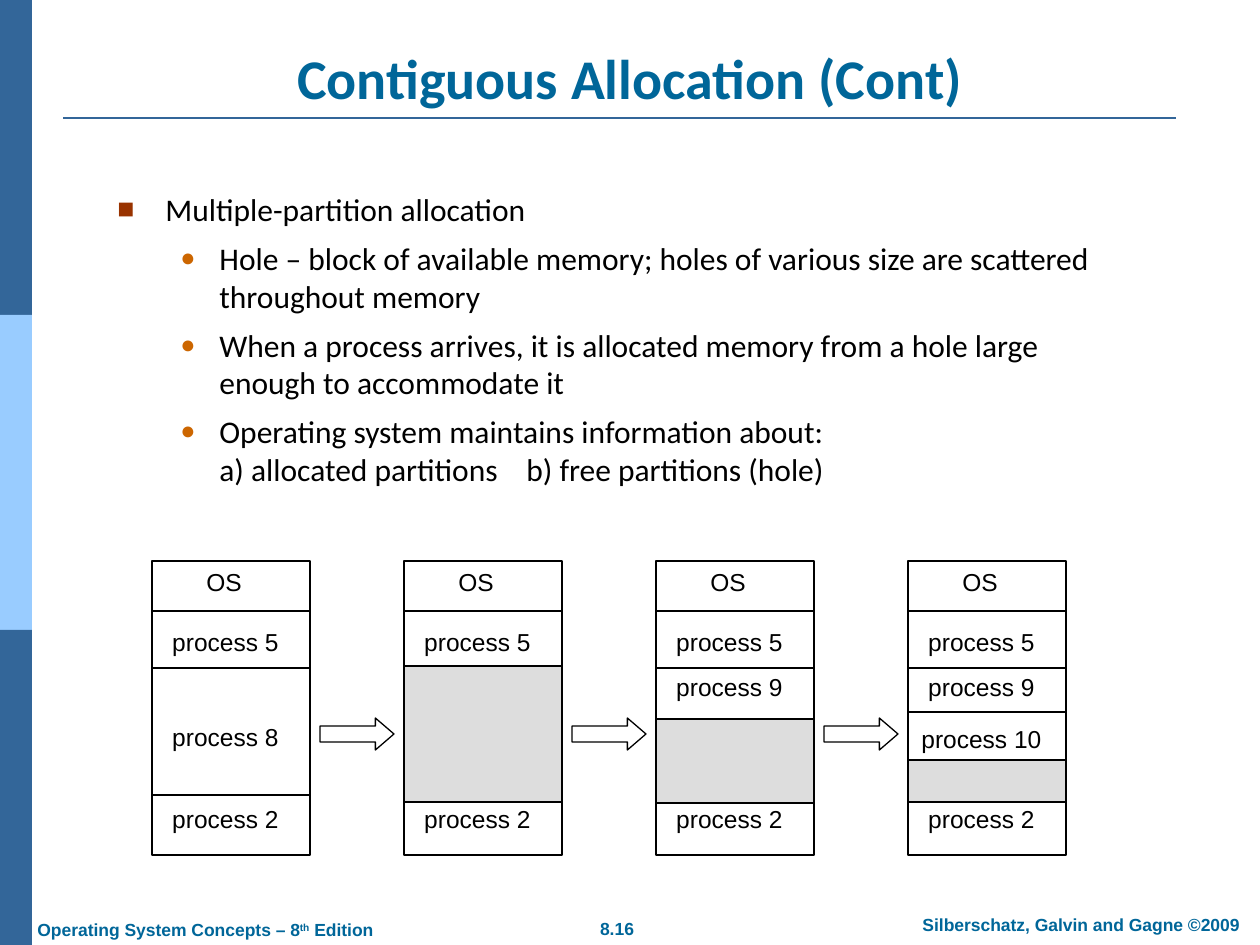
from lxml import etree
from pptx import Presentation
from pptx.dml.color import RGBColor
from pptx.enum.shapes import MSO_CONNECTOR, MSO_SHAPE
from pptx.enum.text import MSO_ANCHOR, PP_ALIGN
from pptx.oxml.ns import qn
from pptx.util import Pt

PX = 914400 / 126
LEFT, CENTER = PP_ALIGN.LEFT, PP_ALIGN.CENTER
TOP, MIDDLE, BOTTOM = MSO_ANCHOR.TOP, MSO_ANCHOR.MIDDLE, MSO_ANCHOR.BOTTOM
RECTANGLE, ARROW = MSO_SHAPE.RECTANGLE, MSO_SHAPE.RIGHT_ARROW
STRAIGHT = MSO_CONNECTOR.STRAIGHT

BLACK, WHITE, GRAY = "000000", "FFFFFF", "DDDDDD"
TEAL, NAVY, SKY = "006699", "336699", "99CCFF"

BULLETS = [
    (0, "Multiple-partition allocation"),
    (1, "Hole – block of available memory; holes of various size are scattered throughout memory"),
    (1, "When a process arrives, it is allocated memory from a hole large enough to accommodate it"),
    (1, "Operating system maintains information about:\va) allocated partitions\tb) free partitions (hole)"),
]
BULLET_STYLES = [
    {"margin": 48, "hang": 48, "mark": "■", "color": "993300", "size": 90},
    {"margin": 102, "hang": 39, "mark": "●", "color": "CC6600", "size": 80},
]
COLUMN_WIDTH, COLUMN_HEIGHT = 158, 294
COLUMNS = [
    {"labels": [("process 5", 60), ("process 8", 155)], "rules": [50, 107, 234], "hole": None},
    {"labels": [("process 5", 60)], "rules": [50], "hole": (105, 136)},
    {"labels": [("process 5", 60), ("process 9", 105)], "rules": [50, 107], "hole": (158, 84)},
    {"labels": [("process 5", 60), ("process 9", 105), ("process 10", 157)],
     "rules": [50, 107, 151], "hole": (199, 42)},
]


def px(value):
    return round(value * PX)


def rgb(value):
    return RGBColor.from_string(value)


def set_font(para, name, size, color, bold=False):
    para.font.name = name
    para.font.size = Pt(size)
    para.font.bold = bold
    para.font.color.rgb = rgb(color)


def add_block(page, kind, left, top, width, height, fill, line=None):
    block = page.shapes.add_shape(kind, px(left), px(top), px(width), px(height))
    block.shadow.inherit = False
    block.fill.solid()
    block.fill.fore_color.rgb = rgb(fill)
    if line:
        block.line.color.rgb = rgb(line)
        block.line.width = Pt(0.75)
    else:
        block.line.fill.background()
    return block


def add_rule(page, left, top, width, color, weight):
    rule = page.shapes.add_connector(STRAIGHT, px(left), px(top), px(left + width), px(top))
    rule.line.color.rgb = rgb(color)
    rule.line.width = Pt(weight)
    etree.SubElement(rule._element.spPr, qn("a:effectLst"))


def add_text(page, text, left, top, width, height, size, color,
             bold=False, align=CENTER, anchor=MIDDLE):
    box = page.shapes.add_textbox(px(left), px(top), px(width), px(height))
    box.text_frame.word_wrap = True
    box.text_frame.vertical_anchor = anchor
    para = box.text_frame.paragraphs[0]
    para.text = text
    para.alignment = align
    set_font(para, "Arial", size, color, bold)
    return para


def add_bullet(para, margin, hang, mark, color, size):
    props = para._p.get_or_add_pPr()
    props.set("marL", str(px(margin)))
    props.set("indent", str(-px(hang)))
    tint = etree.SubElement(props, qn("a:buClr"))
    etree.SubElement(tint, qn("a:srgbClr"), val=color)
    etree.SubElement(props, qn("a:buSzPct"), val=str(size * 1000))
    etree.SubElement(props, qn("a:buFont"), typeface="Arial")
    etree.SubElement(props, qn("a:buChar"), char=mark)


def add_tab(para, position):
    tabs = etree.SubElement(para._p.get_or_add_pPr(), qn("a:tabLst"))
    etree.SubElement(tabs, qn("a:tab"), pos=str(px(position)), algn="l")


def draw_side_band(page, left, top, width, height):
    for index, color in enumerate([NAVY, SKY, NAVY]):
        add_block(page, RECTANGLE, left, top + index * height // 3, width, height // 3, color)


def draw_title(page, left, top, width, height):
    title = page.shapes.title
    title.left, title.top, title.width, title.height = px(left), px(top), px(width), px(height)
    title.text_frame.vertical_anchor = BOTTOM
    para = title.text_frame.paragraphs[0]
    para.text = "Contiguous Allocation (Cont)"
    para.alignment = CENTER
    set_font(para, "Calibri", 32, TEAL, True)
    add_rule(page, left, top + height + 1, 1113, NAVY, 1.5)


def draw_bullets(page, left, top, width, height):
    box = page.shapes.add_textbox(px(left), px(top), px(width), px(height))
    frame = box.text_frame
    frame.word_wrap = True
    for index, (level, text) in enumerate(BULLETS):
        para = frame.add_paragraph() if index else frame.paragraphs[0]
        para.text = text
        para.level = level
        add_bullet(para, **BULLET_STYLES[level])
        if "\t" in text:
            add_tab(para, 409)
        if index:
            para.space_before = Pt(6.3)
        set_font(para, "Calibri", 18, BLACK)


def draw_column(page, left, top, labels, rules, hole):
    add_block(page, RECTANGLE, left, top, COLUMN_WIDTH, COLUMN_HEIGHT, WHITE, BLACK)
    for offset in rules:
        add_rule(page, left, top + offset, COLUMN_WIDTH, BLACK, 0.75)
    if hole:
        offset, height = hole
        add_block(page, RECTANGLE, left, top + offset, COLUMN_WIDTH, height, GRAY, BLACK)
    add_text(page, "OS", left + 37, top, 70, 42, 14, BLACK)
    for text, offset in labels + [("process 2", 237)]:
        add_text(page, text, left, top + offset, 147, 42, 14, BLACK)


def draw_memory(page, left, top, pitch):
    for index, column in enumerate(COLUMNS):
        start = left + index * pitch
        draw_column(page, start, top, **column)
        if index:
            arrow = add_block(page, ARROW, start - 84, top + 157, 74, 32, WHITE, BLACK)
            arrow.adjustments[0] = 0.5
            arrow.adjustments[1] = 0.58


def draw_footer(page, left, top):
    edition = add_text(page, "Operating System Concepts – 8", left, top + 5, 370, 34, 10, TEAL,
                       True, LEFT, TOP)
    suffix = edition.add_run()
    suffix.text = "th"
    suffix.font._element.set("baseline", "30000")
    edition.add_run().text = " Edition"
    add_text(page, "8.16", left + 557, top + 4, 70, 34, 10, TEAL, True, anchor=TOP)
    add_text(page, "Silberschatz, Galvin and Gagne ©2009", left + 869, top, 374, 34, 10, TEAL,
             True, anchor=TOP)


def main():
    deck = Presentation()
    deck.slide_width, deck.slide_height = px(1260), px(945)
    page = deck.slides.add_slide(deck.slide_layouts[5])
    draw_side_band(page, 0, 0, 32, 945)
    draw_title(page, 63, 38, 1134, 79)
    draw_bullets(page, 105, 184, 1013, 359)
    draw_memory(page, 152, 561, 252)
    draw_footer(page, 25, 908)
    deck.save("out.pptx")


if __name__ == "__main__":
    main()
